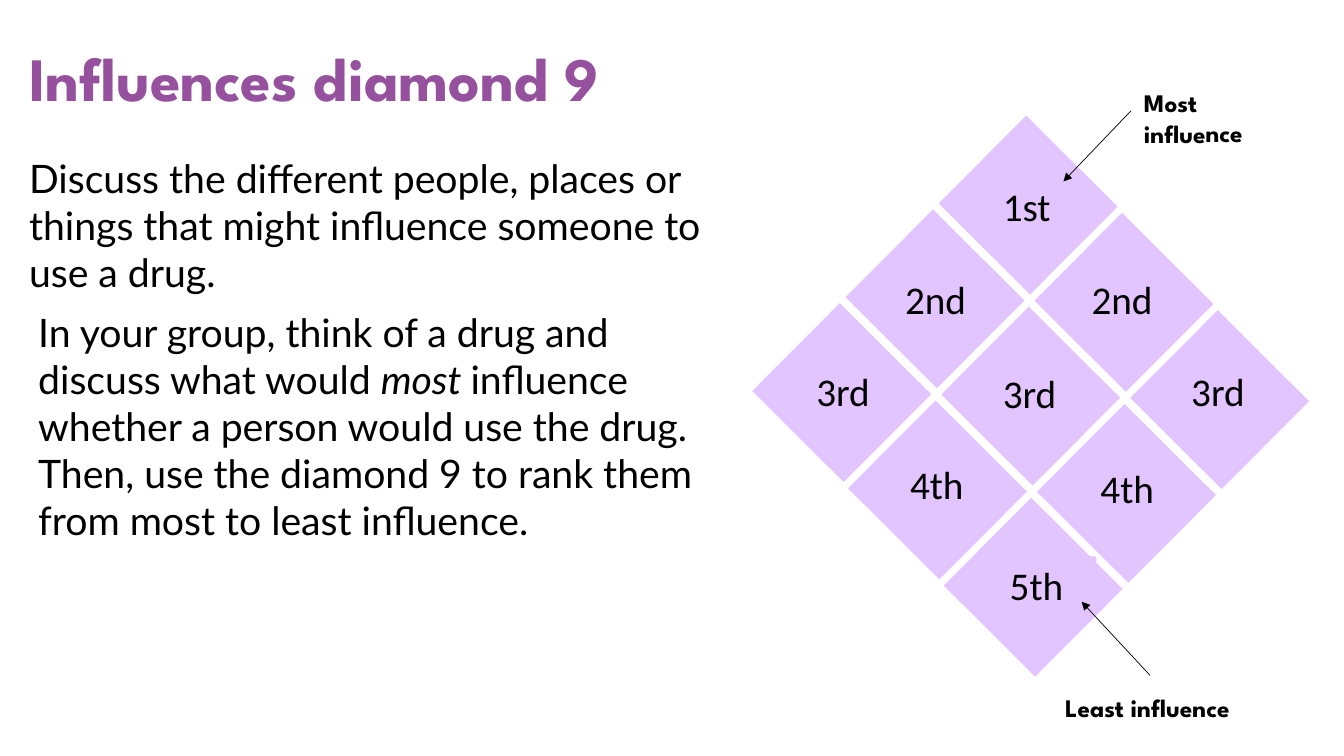
from dataclasses import dataclass

from lxml.etree import SubElement
from pptx import Presentation
from pptx.dml.color import RGBColor
from pptx.enum.shapes import MSO_CONNECTOR as Connector, MSO_SHAPE as Preset
from pptx.enum.text import MSO_ANCHOR as Anchor, MSO_AUTO_SIZE as AutoSize, PP_ALIGN as Align
from pptx.oxml.ns import qn
from pptx.shapes.autoshape import Shape
from pptx.slide import Slide
from pptx.util import Pt

WHITE = RGBColor(0xFF, 0xFF, 0xFF)
BLACK = RGBColor(0x00, 0x00, 0x00)
PURPLE = RGBColor(0x95, 0x51, 0x9E)
LILAC = RGBColor(0xE2, 0xC5, 0xFF)

HEADING_FONT = "League Spartan"
BODY_FONT = "Lato"
RANK_FONT = "Calibri"

TILE_WIDTH, TILE_HEIGHT, TILE_ANGLE = 92.16, 88.56, 44.9
TOP_TILE = (688.3, 102.2)
STEP_DOWN_LEFT = (-66.6, 67)
STEP_DOWN_RIGHT = (68.4, 69.5)
RANK_HEIGHT = 41


@dataclass(frozen=True)
class Tile:
    """A diamond, counted in steps from the top one, and its rank label in points."""
    rank: str
    steps_left: int
    steps_right: int
    label_left: float
    label_top: float
    label_width: float


@dataclass(frozen=True)
class Callout:
    """A caption and the arrow that leads from it to a diamond."""
    text: str
    box: tuple[float, float, float, float]
    start: tuple[float, float]
    end: tuple[float, float]


TILES = [
    Tile("1st", 0, 0, 709.2, 126.7, 62.6),
    Tile("2nd", 1, 0, 639.4, 193, 64),
    Tile("2nd", 0, 1, 772.6, 193, 64),
    Tile("3rd", 1, 1, 709.2, 259.9, 62),
    Tile("3rd", 2, 0, 576, 258.5, 62),
    Tile("3rd", 0, 2, 843.8, 258.5, 62),
    Tile("4th", 2, 1, 643, 325.4, 57.6),
    Tile("4th", 1, 2, 779, 328.3, 57.6),
    Tile("5th", 2, 2, 714.2, 397.4, 69),
]

CALLOUTS = [
    Callout("Most influence", (810, 59, 105.8, 51), (807.8, 79.2), (759.6, 129.6)),
    Callout("Least influence", (753.8, 491, 167.8, 28.8), (821.5, 482.4), (772.6, 429.8)),
]


def write_text(shape: Shape, text: str, *, font: str, size: float,
               color: RGBColor = BLACK, bold: bool = False, italic: bool = False) -> None:
    """Append a formatted run to the first paragraph of the shape."""
    frame = shape.text_frame
    frame.word_wrap = True
    frame.auto_size = AutoSize.NONE
    frame.vertical_anchor = Anchor.TOP
    paragraph = frame.paragraphs[0]
    paragraph.alignment = Align.LEFT
    run = paragraph.add_run()
    run.text = text
    run.font.name = font
    run.font.size = Pt(size)
    run.font.color.rgb = color
    run.font.bold = bold
    run.font.italic = italic


def add_text_box(slide: Slide, left: float, top: float, width: float, height: float) -> Shape:
    return slide.shapes.add_textbox(Pt(left), Pt(top), Pt(width), Pt(height))


def add_lilac_rectangle(slide: Slide, left: float, top: float,
                        width: float, height: float) -> Shape:
    shape = slide.shapes.add_shape(Preset.RECTANGLE, Pt(left), Pt(top), Pt(width), Pt(height))
    shape.shadow.inherit = False
    shape.fill.solid()
    shape.fill.fore_color.rgb = LILAC
    shape.line.fill.background()
    return shape


def add_title(slide: Slide) -> None:
    title = slide.shapes.title
    title.left, title.top, title.width, title.height = Pt(13.7), Pt(25.2), Pt(940), Pt(60.5)
    title.line.color.rgb = WHITE
    title.line.width = Pt(0.75)
    write_text(title, "Influences diamond 9", font=HEADING_FONT, size=44,
               color=PURPLE, bold=True)


def add_instructions(slide: Slide) -> None:
    question = add_text_box(slide, 13.7, 106.6, 523.4, 74.9)
    write_text(question, "Discuss the different people, places or things that might "
               "influence someone to use a drug.", font=BODY_FONT, size=28)
    task = add_text_box(slide, 20.2, 216.7, 493.2, 177)
    for text, italic in (
        ("In your group, think of a drug and discuss what would ", False),
        ("most ", True),
        ("influence whether a person would use the drug. Then, use the diamond 9 "
         "to rank them from most to least influence.", False),
    ):
        write_text(task, text, font=BODY_FONT, size=28, italic=italic)


def add_tile(slide: Slide, tile: Tile) -> None:
    left, top = (
        origin + tile.steps_left * down_left + tile.steps_right * down_right
        for origin, down_left, down_right in zip(TOP_TILE, STEP_DOWN_LEFT, STEP_DOWN_RIGHT)
    )
    add_lilac_rectangle(slide, left, top, TILE_WIDTH, TILE_HEIGHT).rotation = TILE_ANGLE


def add_rank(slide: Slide, tile: Tile) -> None:
    label = add_lilac_rectangle(slide, tile.label_left, tile.label_top,
                                tile.label_width, RANK_HEIGHT)
    write_text(label, tile.rank, font=RANK_FONT, size=28)


def add_callout(slide: Slide, callout: Callout) -> None:
    caption = add_text_box(slide, *callout.box)
    caption.rotation = 359.9
    write_text(caption, callout.text, font=HEADING_FONT, size=18, bold=True)
    arrow = slide.shapes.add_connector(
        Connector.STRAIGHT, *(Pt(value) for value in callout.start + callout.end))
    arrow.line.color.rgb = BLACK
    arrow.line.width = Pt(0.5)
    SubElement(arrow.line._get_or_add_ln(), qn("a:tailEnd"), type="triangle")
    SubElement(arrow._element.spPr, qn("a:effectLst"))


def main() -> None:
    presentation = Presentation()
    presentation.slide_width, presentation.slide_height = Pt(960), Pt(540)
    slide = presentation.slides.add_slide(presentation.slide_layouts[5])
    add_title(slide)
    add_instructions(slide)
    for tile in TILES:
        add_tile(slide, tile)
    for tile in TILES:
        add_rank(slide, tile)
    for callout in CALLOUTS:
        add_callout(slide, callout)
    presentation.save("out.pptx")


if __name__ == "__main__":
    main()
